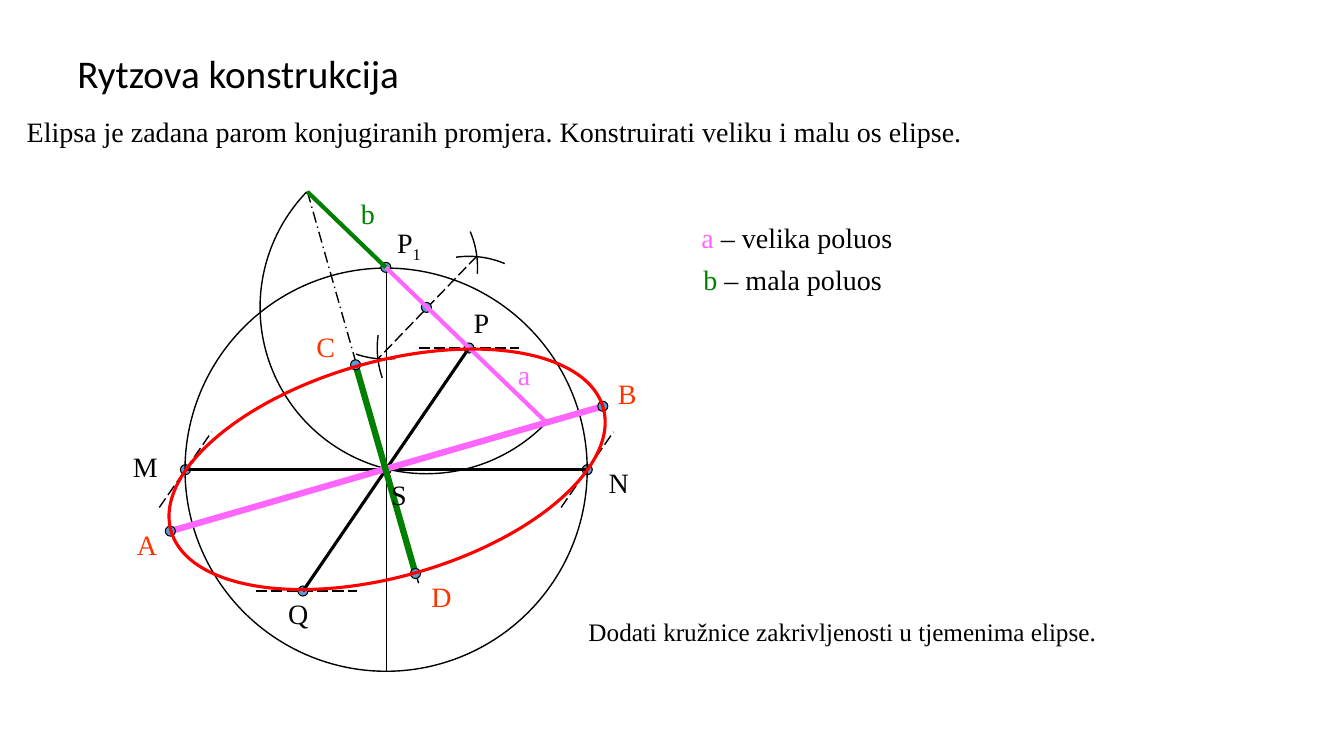
"""Builds the slide on Rytz's construction of the axes of an ellipse."""
from pptx import Presentation
from pptx.dml.color import RGBColor as RGB
from pptx.enum.dml import MSO_LINE as Dash
from pptx.enum.shapes import MSO_CONNECTOR as Link, MSO_SHAPE as Form
from pptx.enum.text import MSO_ANCHOR as Anchor, MSO_AUTO_SIZE as Fit, PP_ALIGN as Align
from pptx.oxml.ns import qn
from pptx.util import Pt

BLACK = RGB(0, 0, 0)
BLUE = RGB(0x5B, 0x9B, 0xD5)
PINK = RGB(0xFF, 0x66, 0xFF)
GREEN = RGB(0, 0x80, 0)
RED = RGB(0xFF, 0, 0)
ORANGE = RGB(0xFF, 0x33, 0)

S = (275.8, 335.5)
M, N = (132.5, 335.5), (419.5, 335.5)
P, Q = (335, 248.6), (216.4, 422.2)
P1 = (275.6, 191)
A, B = (121.7, 379.4), (430.6, 290.2)
C, D = (254, 260.6), (296.8, 409.7)
MID = (304.6, 219.6)
TOP, END = (219.6, 137), (391, 302.4)


def set_font(run, color, size=20, name="Times New Roman"):
    """Give a run its font, size and colour."""
    font = run.font
    font.name, font.size, font.color.rgb = name, Pt(size), color


def add_title(slide, text):
    """Place and format the title."""
    title = slide.shapes.title
    title.left, title.top, title.width, title.height = Pt(48), Pt(30), Pt(288), Pt(48)
    frame = title.text_frame
    frame.text = text
    frame.auto_size = Fit.NONE
    frame.vertical_anchor = Anchor.MIDDLE
    para = frame.paragraphs[0]
    para.alignment, para.line_spacing = Align.LEFT, 0.9
    set_font(para.runs[0], BLACK, 28, "Calibri")


def add_text(slide, left, top, width, text, color=BLACK, size=20, tail=""):
    """Add a text box, with an optional black tail run, and return the tail."""
    box = slide.shapes.add_textbox(Pt(left), Pt(top), Pt(width), Pt(size * 1.5))
    frame = box.text_frame
    frame.word_wrap = True
    para = frame.paragraphs[0]
    para.text = text
    set_font(para.runs[0], color, size)
    if tail:
        run = para.add_run()
        run.text = tail
        set_font(run, BLACK, size)
        return run


def add_line(slide, start, end, color=BLACK, width=1, dash=None):
    """Add a straight line between two points."""
    line = slide.shapes.add_connector(Link.STRAIGHT, *map(Pt, start + end))
    line.line.color.rgb, line.line.width = color, Pt(width)
    if dash:
        line.line.dash_style = dash
    props = line._element.spPr
    props.append(props.makeelement(qn("a:effectLst"), {}))


def add_round(slide, mid, wide, high, color=BLACK, width=1, fill=None, form=Form.OVAL):
    """Add a round shape about its centre."""
    x, y = mid
    shape = slide.shapes.add_shape(
        form, Pt(x - wide / 2), Pt(y - high / 2), Pt(wide), Pt(high))
    shape.shadow.inherit = False
    shape.line.color.rgb, shape.line.width = color, Pt(width)
    if fill:
        shape.fill.solid()
        shape.fill.fore_color.rgb = fill
    else:
        shape.fill.background()
    return shape


def add_arc(slide, mid, radius, start, end):
    """Add a clockwise arc between two angles in degrees."""
    arc = add_round(slide, mid, 2 * radius, 2 * radius, form=Form.ARC)
    for spot, angle in enumerate((start, end)):
        arc.adjustments[spot] = angle * 0.6


def add_dot(slide, mid):
    """Mark a point."""
    add_round(slide, mid, 7.2, 7.2, width=0.75, fill=BLUE)


def main():
    """Build and save the slide."""
    deck = Presentation()
    deck.slide_width, deck.slide_height = Pt(960), Pt(540)
    slide = deck.slides.add_slide(deck.slide_layouts[5])
    add_title(slide, "Rytzova konstrukcija")
    add_text(slide, 12, 78, 690, "Elipsa je zadana parom konjugiranih promjera. "
             "Konstruirati veliku i malu os elipse.")

    add_line(slide, (276, 191.5), (276, 479.5))
    for (x, y), dx, dy in ((P, 36, 0), ((218.9, 422.2), 36, 0),
                           (N, 18.7, -27), (M, 18.7, -27)):
        add_line(slide, (x - dx, y - dy), (x + dx, y + dy), dash=Dash.LONG_DASH)
    for mid in (M, N, S, P, Q):
        add_dot(slide, mid)
    for start, end in ((M, N), (P, Q)):
        add_line(slide, start, end, width=2.25)
    add_round(slide, S, 287.3, 288)
    add_line(slide, TOP, END)
    for mid, start, end in ((P1, 337, 4), (P1, 84, 109), (P, 262, 293), (P, 161, 188)):
        add_arc(slide, mid, 65.5, start, end)
    add_line(slide, (340.6, 183), (270, 256.3), dash=Dash.LONG_DASH)
    add_arc(slide, MID, 118.8, 44, 224)
    for start, end in ((A, B), (TOP, (299.5, 418.3))):
        add_line(slide, start, end, dash=Dash.LONG_DASH_DOT)
    for mid in (P1, MID):
        add_dot(slide, mid)

    for start, end, color, width in ((P1, END, PINK, 3), (A, B, PINK, 4.5),
                                     (TOP, P1, GREEN, 3), (C, D, GREEN, 4.5)):
        add_line(slide, start, end, color, width)
    for mid in (A, B, C, D):
        add_dot(slide, mid)
    curve = add_round(slide, (276.5, 335.2), 321, 153.4, RED, 2.25)
    curve.rotation = 344.1

    for text, left, top, color in (
            ("S", 272.2, 337.7, BLACK), ("M", 87.8, 317.5, BLACK),
            ("N", 427.7, 329, BLACK), ("P", 331.2, 214.6, BLACK),
            ("Q", 198.7, 422.6, BLACK), ("A", 90.7, 373, ORANGE),
            ("B", 434.2, 265.7, ORANGE), ("C", 218.9, 231.8, ORANGE),
            ("D", 301, 410.4, ORANGE), ("a", 362.9, 252, PINK),
            ("b", 250.6, 136.8, GREEN)):
        add_text(slide, left, top, 40, text, color)
    index = add_text(slide, 276.5, 157.7, 40, "P", tail="1")
    index.font._element.set("baseline", "-25000")

    add_text(slide, 494, 154, 174, "a", PINK, tail=" – velika poluos")
    add_text(slide, 495.4, 184.3, 151, "b", GREEN, tail=" – mala poluos")
    add_text(slide, 413.3, 437, 526, "Dodati kružnice zakrivljenosti u tjemenima elipse.",
             size=18)
    deck.save("out.pptx")


if __name__ == "__main__":
    main()
